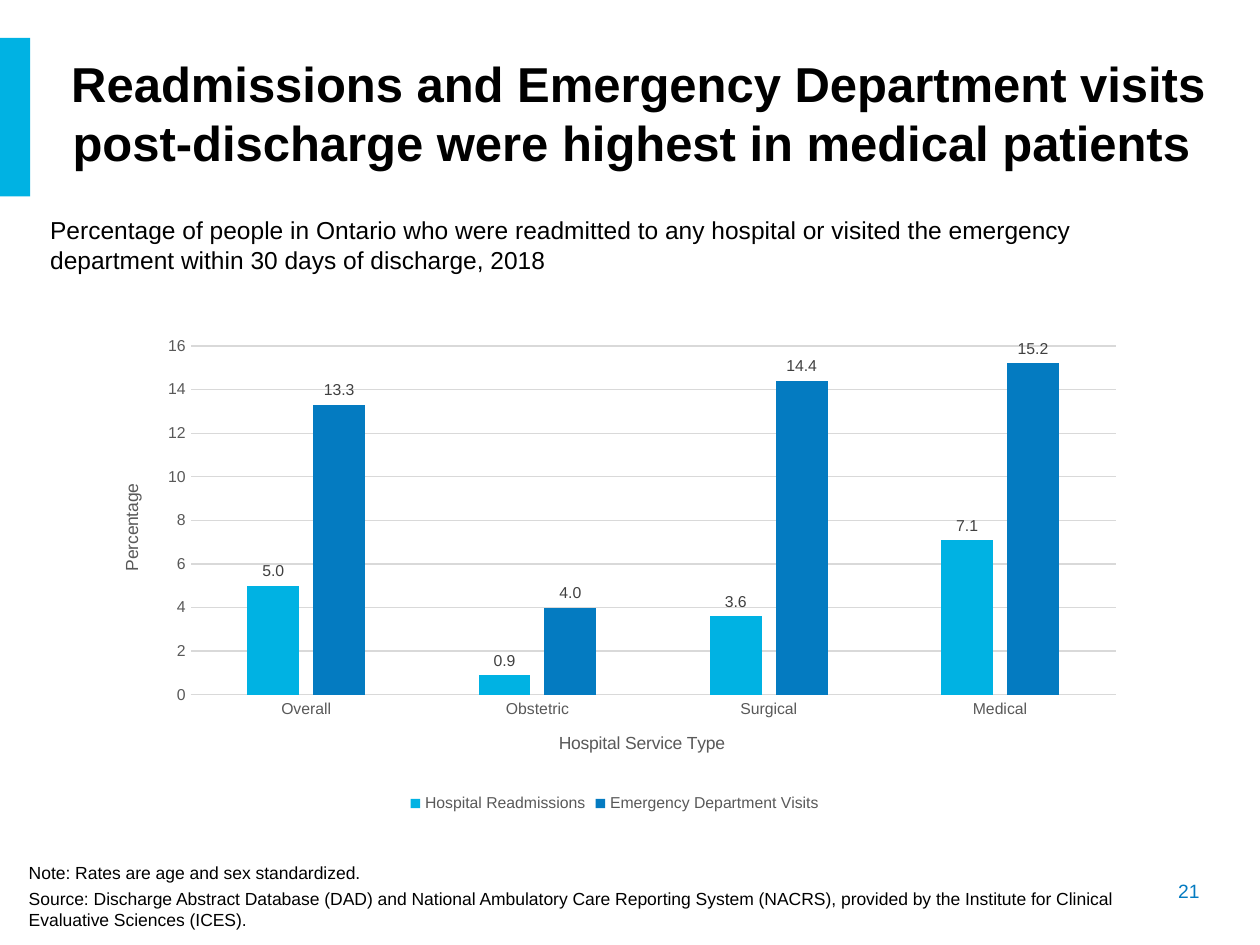
from lxml.etree import SubElement
from pptx import Presentation
from pptx.chart.data import CategoryChartData
from pptx.dml.color import RGBColor
from pptx.enum.chart import XL_CHART_TYPE, XL_LABEL_POSITION, XL_LEGEND_POSITION, XL_TICK_MARK
from pptx.enum.shapes import MSO_SHAPE
from pptx.enum.text import MSO_ANCHOR, MSO_AUTO_SIZE, PP_ALIGN
from pptx.oxml.ns import qn
from pptx.util import Inches, Pt

FONT = "Arial"
BLACK, GREY, DARK_GREY, LIGHT_GREY = "000000", "595959", "404040", "D9D9D9"
CYAN, BLUE = "00B2E3", "047BC1"

TITLE = "Readmissions and Emergency Department visits post-discharge were highest in medical patients "
SUBTITLE = (
    "Percentage of people in Ontario who were readmitted to any hospital or visited "
    "the emergency department within 30 days of discharge, 2018"
)
NOTES = [
    "Note: Rates are age and sex standardized.",
    "Source: Discharge Abstract Database (DAD) and National Ambulatory Care Reporting System "
    "(NACRS), provided by the Institute for Clinical Evaluative Sciences (ICES).",
]
PAGE_NUMBER = "21"
SERVICE_TYPES = ["Overall", "Obstetric", "Surgical", "Medical"]
SERIES = [
    ("Hospital Readmissions", CYAN, [5.0, 0.9, 3.6, 7.1]),
    ("Emergency Department Visits ", BLUE, [13.3, 4.0, 14.4, 15.2]),
]
PLOT_AREA = {"x": 0.09, "y": 0.04, "w": 0.89, "h": 0.71}


def color(value):
    return RGBColor.from_string(value)


def style_font(font, size, value, bold=False):
    font.name = FONT
    font.size = Pt(size)
    font.bold = bold
    font.color.rgb = color(value)


def write(frame, lines, size, value, bold=False, align=PP_ALIGN.LEFT, before=0):
    frame.word_wrap = True
    frame.auto_size = MSO_AUTO_SIZE.NONE
    for index, line in enumerate(lines):
        paragraph = frame.paragraphs[0] if index == 0 else frame.add_paragraph()
        paragraph.alignment = align
        paragraph.space_before = Pt(before)
        run = paragraph.add_run()
        run.text = line
        style_font(run.font, size, value, bold)


def add_text(slide, box, lines, size, value, **options):
    shape = slide.shapes.add_textbox(*map(Inches, box))
    write(shape.text_frame, lines, size, value, **options)


def style_axis(axis, title):
    axis.major_tick_mark = axis.minor_tick_mark = XL_TICK_MARK.NONE
    style_font(axis.tick_labels.font, 9, GREY)
    run = axis.axis_title.text_frame.paragraphs[0].add_run()
    run.text = title
    style_font(run.font, 10, GREY)


def place_plot_area(chart):
    plot_area = chart._chartSpace.chart.plotArea
    for layout in plot_area.findall(qn("c:layout")):
        plot_area.remove(layout)
    layout = SubElement(plot_area, qn("c:layout"))
    plot_area.insert(0, layout)
    manual = SubElement(layout, qn("c:manualLayout"))
    settings = {"layoutTarget": "inner", "xMode": "edge", "yMode": "edge", **PLOT_AREA}
    for name, value in settings.items():
        SubElement(manual, qn(f"c:{name}")).set("val", str(value))


def add_visits_chart(slide):
    data = CategoryChartData(number_format="0.0")
    data.categories = SERVICE_TYPES
    for name, _, values in SERIES:
        data.add_series(name, values)
    box = map(Inches, (0.77, 2.59, 8.25, 3.9))
    chart = slide.shapes.add_chart(XL_CHART_TYPE.COLUMN_CLUSTERED, *box, data).chart
    style_font(chart.font, 10, BLACK)
    chart.has_title = False
    chart.has_legend = True
    chart.legend.position = XL_LEGEND_POSITION.BOTTOM
    chart.legend.include_in_layout = False
    style_font(chart.legend.font, 9, GREY)

    plot = chart.plots[0]
    plot.gap_width, plot.overlap, plot.vary_by_categories = 219, -27, False
    for series, (_, fill, _) in zip(plot.series, SERIES):
        series.format.fill.solid()
        series.format.fill.fore_color.rgb = color(fill)
        labels = series.data_labels
        labels.show_value = True
        labels.position = XL_LABEL_POSITION.OUTSIDE_END
        labels.number_format = "#,##0.0"
        labels.number_format_is_linked = False
        style_font(labels.font, 9, DARK_GREY)

    category_axis, value_axis = chart.category_axis, chart.value_axis
    style_axis(category_axis, "Hospital Service Type")
    style_axis(value_axis, "Percentage")
    value_axis.minimum_scale, value_axis.maximum_scale, value_axis.major_unit = 0, 16, 2
    value_axis.tick_labels.number_format = "#,##0"
    value_axis.tick_labels.number_format_is_linked = False
    value_axis.format.line.fill.background()
    for line in (category_axis.format.line, value_axis.major_gridlines.format.line):
        line.color.rgb = color(LIGHT_GREY)
        line.width = Pt(0.75)
    place_plot_area(chart)


def main():
    presentation = Presentation()
    presentation.slide_width, presentation.slide_height = Inches(10), Inches(7.5)
    slide = presentation.slides.add_slide(presentation.slide_layouts[5])

    accent = slide.shapes.add_shape(MSO_SHAPE.RECTANGLE, *map(Inches, (0, 0.3, 0.24, 1.26)))
    accent.shadow.inherit = False
    accent.fill.solid()
    accent.fill.fore_color.rgb = color(CYAN)
    accent.line.fill.background()

    title = slide.shapes.title
    title.left, title.top, title.width, title.height = map(Inches, (0.29, 0.37, 9.55, 1.04))
    title.text_frame.vertical_anchor = MSO_ANCHOR.MIDDLE
    write(title.text_frame, [TITLE], 28, BLACK, bold=True, align=PP_ALIGN.CENTER)

    add_text(slide, (0.3, 1.66, 8.9, 0.57), [SUBTITLE], 14, BLACK)
    add_visits_chart(slide)
    add_text(slide, (0.13, 6.79, 8.9, 0.66), NOTES, 10, BLACK, before=3)
    add_text(slide, (8.45, 6.93, 1.17, 0.29), [PAGE_NUMBER], 11, BLUE, align=PP_ALIGN.RIGHT)
    presentation.save("out.pptx")


if __name__ == "__main__":
    main()
